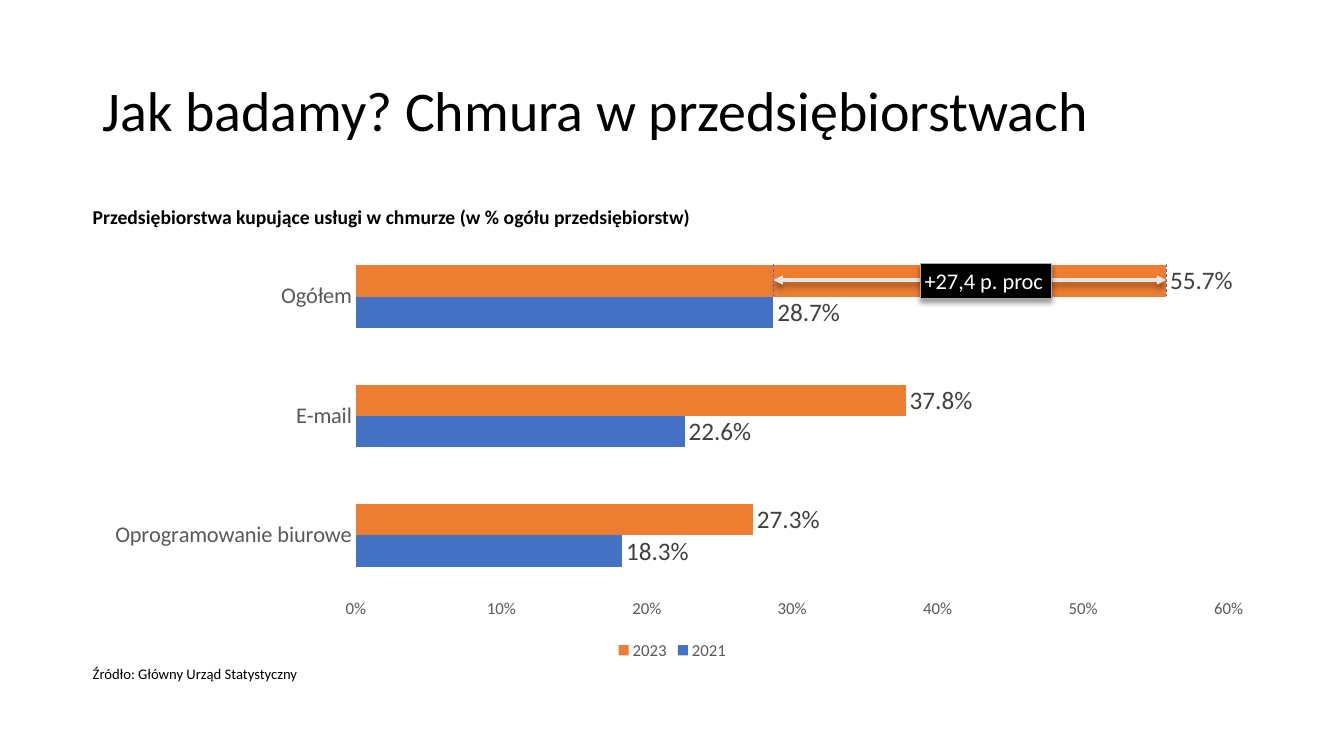
from lxml import etree
from pptx import Presentation
from pptx.chart.data import CategoryChartData
from pptx.dml.color import RGBColor
from pptx.enum import chart as charts, dml, shapes, text
from pptx.oxml import ns
from pptx.util import Pt

FONT = "Calibri"
COLORS = {
    "black": "000000", "white": "FFFFFF", "blue": "4472C4", "orange": "ED7D31",
    "axis": "595959", "value": "404040", "arrow": "E7E6E6", "border": "AFABAB",
}
SHARES = {
    "2021": ("blue", (0.183, 0.226, 0.287)),
    "2023": ("orange", (0.273, 0.378, 0.557)),
}
CATEGORIES = ("Oprogramowanie biurowe", "E-mail", "Ogółem")
LEFT, WIDTH = 66.24, 828
CHART_TOP, CHART_HEIGHT = 146.2, 328.3
PLOT = {"x": 0.227, "y": 0.07, "w": 0.753, "h": 0.78}
AXIS_MAX = 0.6


def rgb(name):
    return RGBColor.from_string(COLORS[name])


def add_xml(parent, tag, **attributes):
    return etree.SubElement(parent, ns.qn(tag),
                            {key: str(value) for key, value in attributes.items()})


def add_shadow(effects):
    """Drop a soft black shadow straight down."""
    shadow = add_xml(effects, "a:outerShdw", blurRad=Pt(4), dist=Pt(3),
                     dir=90 * 60000, algn="ctr", rotWithShape=0)
    shade = add_xml(shadow, "a:srgbClr", val=COLORS["black"])
    add_xml(shade, "a:alpha", val=40000)


class SlideBuilder:
    def __init__(self, slide, font):
        self.slide = slide
        self.font = font

    def style(self, font, size, color, bold=False):
        font.name, font.size, font.bold = self.font, Pt(size), bold
        font.color.rgb = rgb(color)

    def fill_frame(self, frame, words, size, color, bold=False, insets=(0, 0),
                   anchor=text.MSO_ANCHOR.TOP):
        frame.word_wrap = True
        frame.vertical_anchor = anchor
        frame.margin_left = frame.margin_right = Pt(insets[0])
        frame.margin_top = frame.margin_bottom = Pt(insets[1])
        paragraph = frame.paragraphs[0]
        paragraph.text = words
        paragraph.alignment = text.PP_ALIGN.LEFT
        self.style(paragraph.font, size, color, bold)
        return paragraph

    def text_box(self, top, height, words, size, **options):
        box = self.slide.shapes.add_textbox(Pt(LEFT), Pt(top), Pt(WIDTH), Pt(height))
        return self.fill_frame(box.text_frame, words, size, "black", **options)

    def badge(self, left, top, width, height, words):
        badge = self.slide.shapes.add_shape(
            shapes.MSO_SHAPE.RECTANGLE, Pt(left), Pt(top), Pt(width), Pt(height))
        badge.fill.solid()
        badge.fill.fore_color.rgb = rgb("black")
        badge.line.color.rgb = rgb("border")
        badge.line.width = Pt(0.75)
        badge.shadow.inherit = False
        add_shadow(badge._element.spPr.find(ns.qn("a:effectLst")))
        self.fill_frame(badge.text_frame, words, 16, "white", insets=(3, 3))

    def line(self, start, end, color, width, dashed=False, arrows=False):
        line = self.slide.shapes.add_connector(
            shapes.MSO_CONNECTOR.STRAIGHT, *map(Pt, (*start, *end)))
        line.line.color.rgb = rgb(color)
        line.line.width = Pt(width)
        if dashed:
            line.line.dash_style = dml.MSO_LINE.DASH
        properties = line._element.spPr
        effects = add_xml(properties, "a:effectLst")
        if arrows:
            outline = properties.find(ns.qn("a:ln"))
            for end_tag in ("a:headEnd", "a:tailEnd"):
                add_xml(outline, end_tag, type="triangle")
            add_shadow(effects)

    def axis(self, axis, size):
        axis.has_major_gridlines = False
        axis.major_tick_mark = axis.minor_tick_mark = charts.XL_TICK_MARK.NONE
        axis.format.line.fill.background()
        self.style(axis.tick_labels.font, size, "axis")

    def bar_chart(self):
        data = CategoryChartData(number_format="0.0%")
        data.categories = CATEGORIES
        for year, (_, values) in SHARES.items():
            data.add_series(year, values)
        chart = self.slide.shapes.add_chart(
            charts.XL_CHART_TYPE.BAR_CLUSTERED, Pt(LEFT), Pt(CHART_TOP),
            Pt(WIDTH), Pt(CHART_HEIGHT), data).chart
        chart.has_title = False
        self.style(chart.font, 10, "black")
        chart.has_legend = True
        chart.legend.position = charts.XL_LEGEND_POSITION.BOTTOM
        chart.legend.include_in_layout = False
        self.style(chart.legend.font, 12, "axis")

        self.axis(chart.category_axis, 16)
        self.axis(chart.value_axis, 12)
        scale = chart.value_axis
        scale.minimum_scale, scale.maximum_scale, scale.major_unit = 0, AXIS_MAX, 0.1
        scale.tick_labels.number_format = "0%"
        scale.tick_labels.number_format_is_linked = False

        bars = chart.plots[0]
        bars.gap_width, bars.overlap, bars.vary_by_categories = 182, 0, False
        for series, (color, _) in zip(bars.series, SHARES.values()):
            series.format.fill.solid()
            series.format.fill.fore_color.rgb = rgb(color)
            labels = series.data_labels
            labels.show_value = True
            labels.number_format, labels.number_format_is_linked = "0.0%", False
            labels.position = charts.XL_LABEL_POSITION.OUTSIDE_END
            self.style(labels.font, 18, "value")
        self.place_plot(chart)

    def place_plot(self, chart):
        """Fix the inner plot area at the fractions in PLOT."""
        area = chart._chartSpace.chart.plotArea
        for old in area.findall(ns.qn("c:layout")):
            area.remove(old)
        layout = etree.Element(ns.qn("c:layout"))
        area.insert(0, layout)
        manual = add_xml(layout, "c:manualLayout")
        add_xml(manual, "c:layoutTarget", val="inner")
        for side in "xy":
            add_xml(manual, f"c:{side}Mode", val="edge")
        for side, fraction in PLOT.items():
            add_xml(manual, f"c:{side}", val=fraction)

    def growth_arrow(self):
        """Mark the distance between the two bars of the last category."""
        top, bottom, middle = 188.8, 211.2, 200
        ends = [LEFT + WIDTH * (PLOT["x"] + PLOT["w"] * values[-1] / AXIS_MAX)
                for _, values in SHARES.values()]
        for x in ends:
            self.line((x, top), (x, bottom), "blue", 0.5, dashed=True)
        self.line((ends[0], middle), (ends[1], middle), "arrow", 2.25, arrows=True)
        self.badge(657.4, 188, 93.6, 25.2, "+27,4 p. proc")


def main():
    deck = Presentation()
    deck.slide_width, deck.slide_height = Pt(960), Pt(540)
    builder = SlideBuilder(deck.slides.add_slide(deck.slide_layouts[6]), FONT)
    builder.text_box(475.2, 13, "Źródło: Główny Urząd Statystyczny", 10.5)
    builder.bar_chart()
    builder.growth_arrow()
    builder.text_box(
        CHART_TOP, 17.3,
        "Przedsiębiorstwa kupujące usługi w chmurze (w % ogółu przedsiębiorstw)",
        14, bold=True)
    title = builder.text_box(28.8, 104.4, "Jak badamy? Chmura w przedsiębiorstwach", 40,
                             insets=(7.2, 3.6), anchor=text.MSO_ANCHOR.MIDDLE)
    title.line_spacing = 0.9
    deck.save("out.pptx")


if __name__ == "__main__":
    main()
